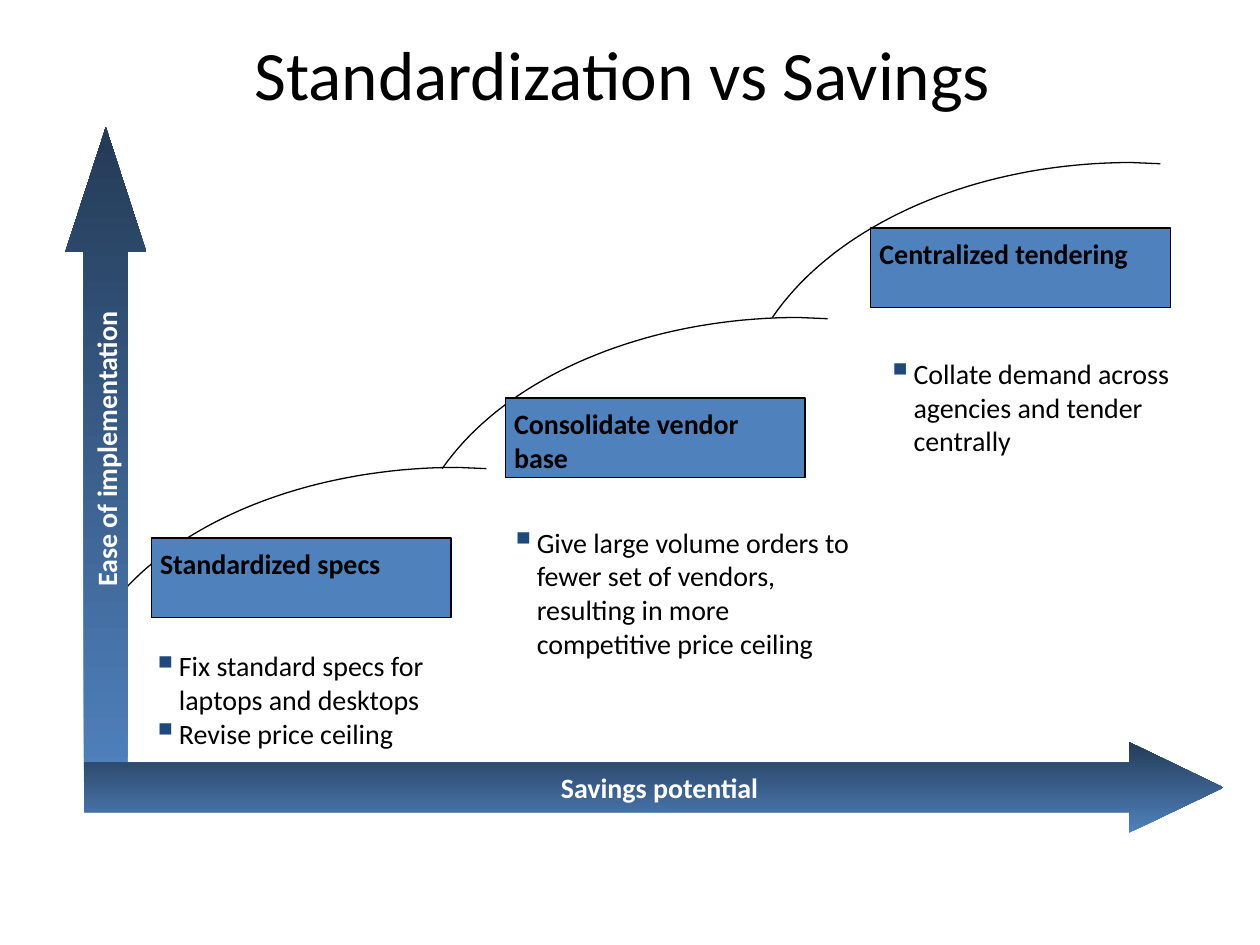
from lxml.etree import SubElement
from pptx import Presentation
from pptx.dml.color import RGBColor
from pptx.enum.shapes import MSO_SHAPE as Shape
from pptx.enum.text import MSO_ANCHOR as Anchor, PP_ALIGN as Align
from pptx.oxml.ns import qn
from pptx.util import Inches, Pt

COLORS = {
    "text": "000000",
    "light_text": "FFFFFF",
    "box": "4F81BD",
    "arrow_dark": "243B57",
    "bullet": "1F497D",
}
FONT = "Calibri"
LABEL_SIZE = (2.38, 0.63)
NOTE_SIZE = (2.79, 0.82)

# One entry per step: curve start and summit, label and note with their corners
STEPS = [
    ((0.85, 4.85), (3.63, 3.71), (1.2, 4.27), "Standardized specs", (1.2, 5.15),
     ["Fix standard specs for laptops and desktops", "Revise price ceiling"]),
    ((3.51, 3.72), (6.34, 2.52), (4.01, 3.16), "Consolidate vendor base", (4.04, 4.17),
     ["Give large volume orders to fewer set of vendors, "
      "resulting in more competitive price ceiling"]),
    ((6.13, 2.52), (8.98, 1.29), (6.91, 1.81), "Centralized tendering", (7.03, 2.83),
     ["Collate demand across agencies and tender centrally"]),
]


def rgb(name):
    return RGBColor.from_string(COLORS[name])


def inches(*values):
    return [Inches(value) for value in values]


def add_bullet(para):
    props = para._p.get_or_add_pPr()
    props.set("marL", str(Inches(0.22)))
    props.set("indent", str(Inches(-0.21)))
    color = SubElement(props, qn("a:buClr"))
    SubElement(color, qn("a:srgbClr"), val=COLORS["bullet"])
    SubElement(props, qn("a:buSzPct"), val="125000")
    SubElement(props, qn("a:buChar"), char="▪")


def add_text(page, area, lines, size=16, bold=False, color="text", align=Align.LEFT,
             anchor=Anchor.TOP, margins=(0, 0, 0, 0), bullets=False, rotation=0):
    box = page.shapes.add_textbox(*inches(*area))
    box.rotation = rotation
    frame = box.text_frame
    left, top, right, bottom = inches(*margins)
    frame_format = {
        "word_wrap": True, "vertical_anchor": anchor, "margin_left": left,
        "margin_top": top, "margin_right": right, "margin_bottom": bottom,
    }
    for name, value in frame_format.items():
        setattr(frame, name, value)
    for index, line in enumerate(lines):
        para = frame.add_paragraph() if index else frame.paragraphs[0]
        para.alignment = align
        if bullets:
            add_bullet(para)
        span = para.add_run()
        span.text = line
        for name, value in {"name": FONT, "size": Pt(size), "bold": bold}.items():
            setattr(span.font, name, value)
        span.font.color.rgb = rgb(color)


def outline(shape):
    shape.shadow.inherit = False
    shape.line.color.rgb = rgb("text")
    shape.line.width = Pt(0.75)


def add_curve(page, start, summit, pieces=40):
    """Rise along a cubic curve from start to summit, then end with a short flat tail."""
    width, height = summit[0] - start[0], summit[1] - start[1]
    points = []
    for piece in range(1, pieces + 1):
        t = piece / pieces
        first, second, third = 3 * t * (1 - t) ** 2, 3 * t * t * (1 - t), t ** 3
        points.append((start[0] + width * (0.18 * first + 0.57 * second + third),
                       start[1] + height * (0.61 * first + second + third)))
    points.append((summit[0] + 0.23, summit[1] + 0.01))
    builder = page.shapes.build_freeform(*inches(*start))
    builder.add_line_segments([inches(*point) for point in points], close=False)
    curve = builder.convert_to_shape()
    curve.fill.background()
    outline(curve)


def add_label(page, corner, text):
    area = (*corner, *LABEL_SIZE)
    box = page.shapes.add_shape(Shape.RECTANGLE, *inches(*area))
    box.fill.solid()
    box.fill.fore_color.rgb = rgb("box")
    outline(box)
    add_text(page, area, [text], bold=True, margins=(0.07, 0.07, 0.07, 0))


def add_axis(page, area, text, head, angle, rotation=0):
    arrow = page.shapes.add_shape(Shape.RIGHT_ARROW, *inches(*area))
    arrow.rotation = rotation
    arrow.shadow.inherit = False
    arrow.adjustments[0], arrow.adjustments[1] = 0.54, head
    arrow.line.fill.background()
    arrow.fill.gradient()
    arrow.fill.gradient_angle = angle
    for stop, name, position in zip(arrow.fill.gradient_stops, ("box", "arrow_dark"), (0, 1)):
        stop.color.rgb = rgb(name)
        stop.position = position
    add_text(page, area, [text], bold=True, color="light_text", align=Align.CENTER,
             anchor=Anchor.MIDDLE, margins=(0.09, 0, 0, 0), rotation=rotation)


def main():
    deck = Presentation()
    deck.slide_width, deck.slide_height = inches(10, 7.5)
    page = deck.slides.add_slide(deck.slide_layouts[6])

    # Title
    add_text(page, (0.13, 0.26, 9.62, 0.64), ["Standardization vs Savings"], size=39.6,
             align=Align.CENTER, anchor=Anchor.MIDDLE)

    # Rising steps
    for start, summit, label_corner, label, note_corner, notes in STEPS:
        add_curve(page, start, summit)
        add_label(page, label_corner, label)
        add_text(page, (*note_corner, *NOTE_SIZE), notes, bullets=True)

    # Axes
    add_axis(page, (-1.76, 3.29, 5.2, 0.64), "Ease of implementation", 1.54, 0, 270)
    add_axis(page, (0.67, 5.89, 9.04, 0.72), "Savings potential", 1.04, 90)

    deck.save("out.pptx")


if __name__ == "__main__":
    main()
